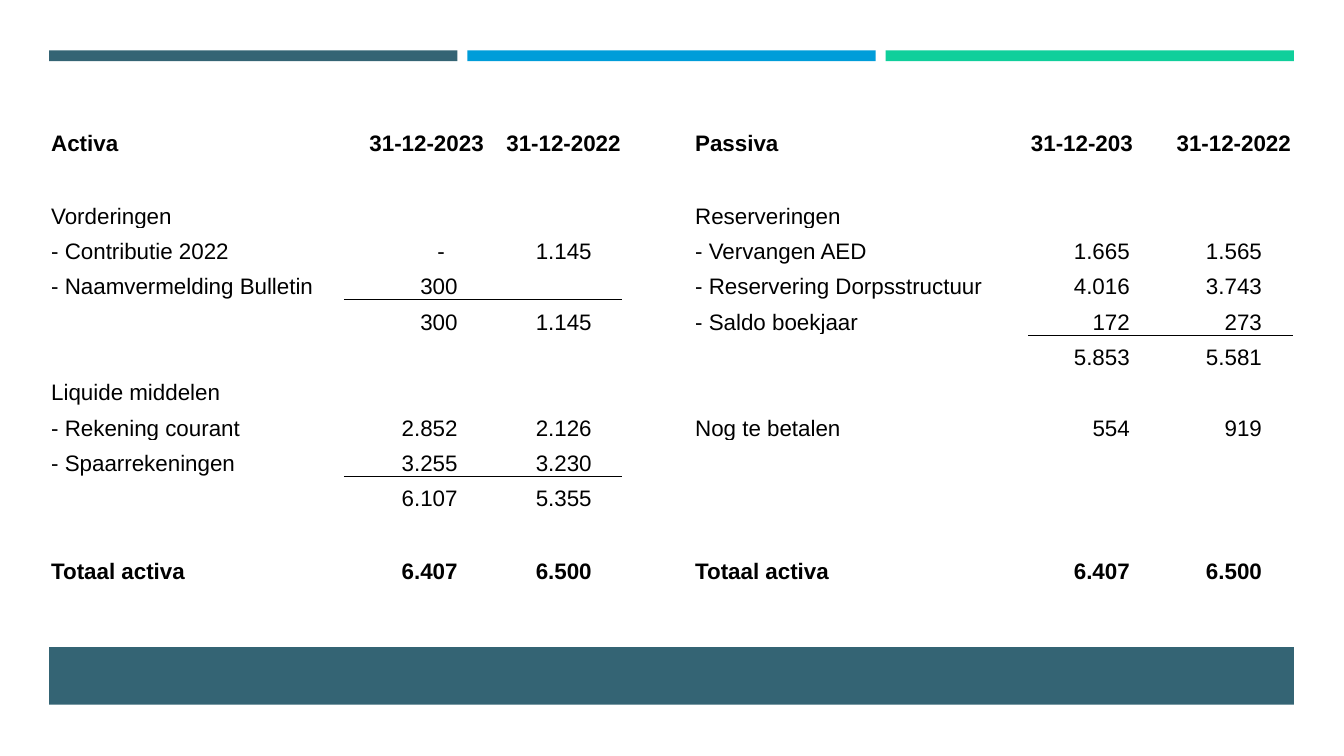
from dataclasses import dataclass

from lxml import etree
from pptx import Presentation
from pptx.dml.color import RGBColor
from pptx.enum.shapes import MSO_SHAPE
from pptx.enum.text import MSO_ANCHOR, PP_ALIGN
from pptx.oxml.ns import qn
from pptx.util import Cm, Pt

RECTANGLE = MSO_SHAPE.RECTANGLE
BOTTOM = MSO_ANCHOR.BOTTOM
LEFT, RIGHT = PP_ALIGN.LEFT, PP_ALIGN.RIGHT


@dataclass(frozen=True)
class Theme:
    slate: str = "346474"
    blue: str = "009DD9"
    green: str = "10CF9B"
    ink: str = "000000"
    font: str = "Arial"
    body: int = 16
    rule: float = 0.5


SLIDE_W, SLIDE_H = 33.87, 19.05
MARGIN = 1.24
BAR_W, BAR_GAP = 10.29, 0.25
BAND_W = 3 * BAR_W + 2 * BAR_GAP

ACTIVA = [
    ("Activa", "31-12-2023", "31-12-2022"),
    (),
    ("Vorderingen",),
    ("- Contributie 2022", "-", "1.145"),
    ("- Naamvermelding Bulletin", "300", ""),
    ("", "300", "1.145"),
    (),
    ("Liquide middelen",),
    ("- Rekening courant", "2.852", "2.126"),
    ("- Spaarrekeningen", "3.255", "3.230"),
    ("", "6.107", "5.355"),
    (),
    ("Totaal activa", "6.407", "6.500"),
]
PASSIVA = [
    ("Passiva", "31-12-203", "31-12-2022"),
    (),
    ("Reserveringen",),
    ("- Vervangen AED", "1.665", "1.565"),
    ("- Reservering Dorpsstructuur", "4.016", "3.743"),
    ("- Saldo boekjaar", "172", "273"),
    ("", "5.853", "5.581"),
    (),
    ("Nog te betalen", "554", "919"),
    (),
    (),
    (),
    ("Totaal activa", "6.407", "6.500"),
]
PASSIVA_COL = 4
COL_WIDTHS = [7.44, 3.56, 3.45, 1.78, 8.46, 3.2, 3.45]
ROW_H, TALL_ROW_H = 0.89, 0.94
LAST_ROW = len(ACTIVA) - 1
TALL_ROWS = (1, LAST_ROW - 1)
BOLD_ROWS = (0, LAST_ROW)
AMOUNT_INDENTS = {1: 0.71, 2: 0.78, 5: 0.66, 6: 0.78}
DASH_INDENT = 1.03
CELL_PAD = 0.05
# Rows followed by a subtotal, with the first ruled amount column
SUBTOTAL_RULES = [(4, 1), (9, 1), (5, 5)]


class SlideBuilder:
    def __init__(self, slide, theme):
        self.slide = slide
        self.theme = theme

    def bar(self, x, y, w, h, color):
        sp = self.slide.shapes.add_shape(RECTANGLE, Cm(x), Cm(y), Cm(w), Cm(h))
        sp.shadow.inherit = False
        sp.fill.solid()
        sp.fill.fore_color.rgb = RGBColor.from_string(color)
        sp.line.fill.background()

    def table(self, x, y, col_widths, row_heights):
        frame = self.slide.shapes.add_table(
            len(row_heights), len(col_widths), Cm(x), Cm(y),
            Cm(sum(col_widths)), Cm(sum(row_heights)))
        table = frame.table
        table.first_row = table.horz_banding = False
        for column, width in zip(table.columns, col_widths):
            column.width = Cm(width)
        for row, height in zip(table.rows, row_heights):
            row.height = Cm(height)
        layout = {"margin_left": Cm(CELL_PAD), "margin_right": Cm(CELL_PAD),
                  "margin_top": Cm(CELL_PAD), "margin_bottom": 0,
                  "vertical_anchor": BOTTOM}
        for cell in table.iter_cells():
            cell.fill.background()
            for name, value in layout.items():
                setattr(cell, name, value)
        return table

    def cell_text(self, cell, text, bold, align, indent):
        cell.margin_right = Cm(indent)
        p = cell.text_frame.paragraphs[0]
        p.alignment = align
        r = p.add_run()
        r.text = text
        style = {"name": self.theme.font, "size": Pt(self.theme.body), "bold": bold}
        for name, value in style.items():
            setattr(r.font, name, value)
        r.font.color.rgb = RGBColor.from_string(self.theme.ink)

    def cell_border(self, cell, side):
        """Draw a thin rule on one side: lnT for top, lnB for bottom."""
        ln = etree.Element(qn("a:" + side), w=str(Pt(self.theme.rule)))
        fill = etree.SubElement(ln, qn("a:solidFill"))
        etree.SubElement(fill, qn("a:srgbClr"), val=self.theme.ink)
        cell._tc.get_or_add_tcPr().insert(0, ln)

    def fill_side(self, table, rows, first_col):
        """Write one side of the balance: label and two years of amounts."""
        for i, row in enumerate(rows):
            for col, text in enumerate(row, first_col):
                if not text:
                    continue
                align, indent = LEFT, CELL_PAD
                if col > first_col and text != "31-12-203":
                    align = RIGHT
                    if i > 0:
                        indent = DASH_INDENT if text == "-" else AMOUNT_INDENTS[col]
                self.cell_text(table.cell(i, col), text, i in BOLD_ROWS, align, indent)


def main():
    prs = Presentation()
    prs.slide_width, prs.slide_height = Cm(SLIDE_W), Cm(SLIDE_H)
    theme = Theme()
    builder = SlideBuilder(prs.slides.add_slide(prs.slide_layouts[6]), theme)

    for i, color in enumerate((theme.slate, theme.blue, theme.green)):
        builder.bar(MARGIN + i * (BAR_W + BAR_GAP), 1.27, BAR_W, 0.27, color)
    builder.bar(MARGIN, 16.31, BAND_W, 1.45, theme.slate)

    heights = [TALL_ROW_H if i in TALL_ROWS else ROW_H for i in range(len(ACTIVA))]
    table = builder.table(MARGIN, 3.05, COL_WIDTHS, heights)
    builder.fill_side(table, ACTIVA, 0)
    builder.fill_side(table, PASSIVA, PASSIVA_COL)
    for row, first in SUBTOTAL_RULES:
        for col in (first, first + 1):
            builder.cell_border(table.cell(row, col), "lnB")
            builder.cell_border(table.cell(row + 1, col), "lnT")

    prs.save("out.pptx")


if __name__ == "__main__":
    main()
